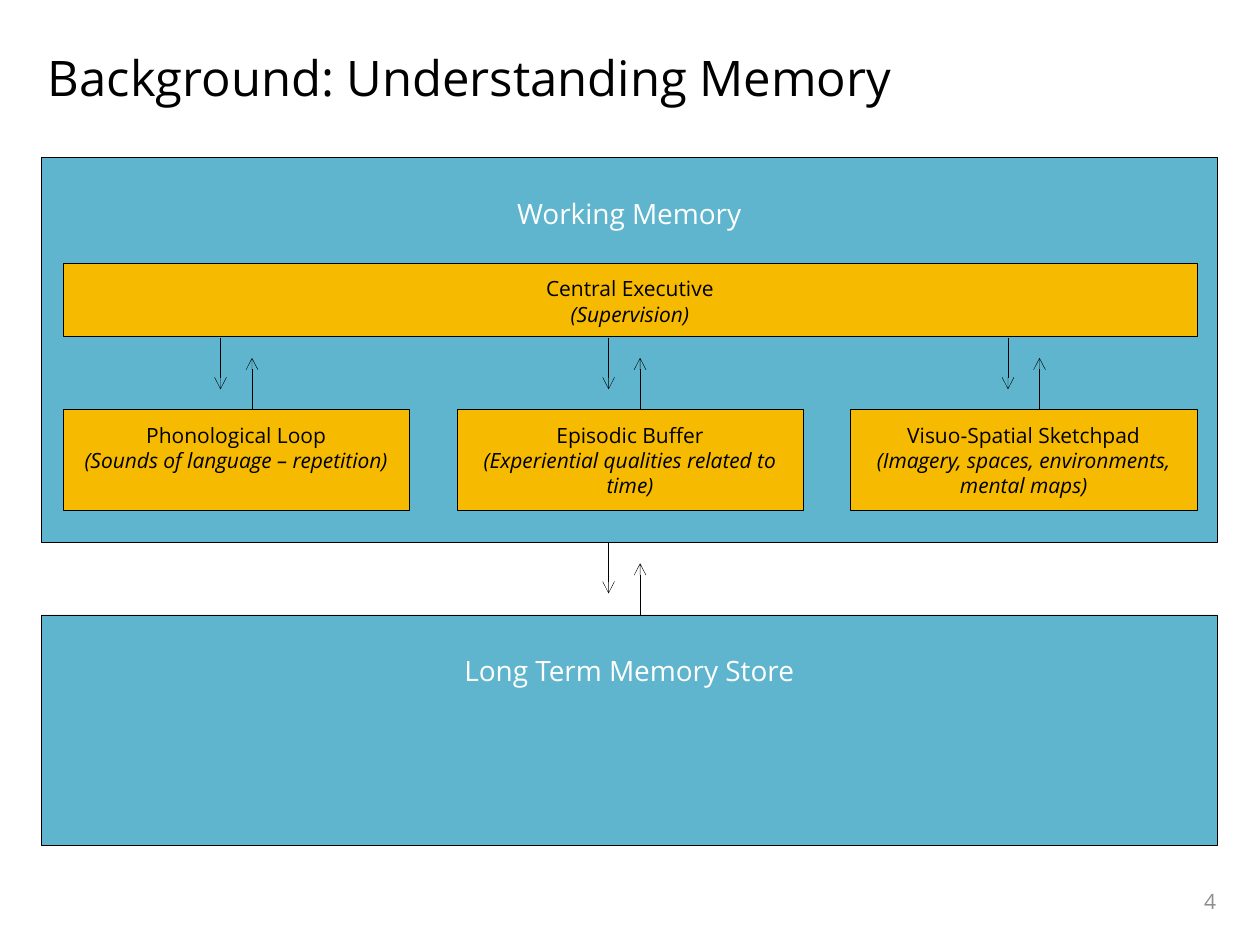
from pptx import Presentation
from pptx.dml.color import RGBColor
from pptx.enum.shapes import MSO_CONNECTOR, MSO_SHAPE
from pptx.enum.text import MSO_ANCHOR, MSO_AUTO_SIZE, PP_ALIGN
from pptx.oxml.ns import qn
from pptx.util import Inches, Pt
from lxml.etree import SubElement

TITLE = "Background: Understanding Memory"
NUMBER = "4"
STORES = [
    ("Long Term Memory Store", 4.88, 1.83),
    ("Working Memory", 1.25, 3.05),
]
CHIEF = ("Central Executive", "(Supervision)")
PARTS = [
    ("Phonological Loop", "(Sounds of language – repetition)"),
    ("Episodic Buffer", "(Experiential qualities related to time)"),
    ("Visuo-Spatial Sketchpad", "(Imagery, spaces, environments, mental maps)"),
]
FLOWS = [(1.75, 2.68, 3.25), (4.83, 2.68, 3.25), (8, 2.68, 3.25), (4.83, 4.3, 4.88)]

BLACK, WHITE, GRAY = "000000", "FFFFFF", "8C8C8C"
BLUE, GOLD = "5FB5CD", "F6BB00"
LEFT, WIDE, STEP = 0.5, 2.75, 3.125
REACH, SHIFT = 0.41, 0.25


def tint(code):
    return RGBColor.from_string(code)


def write(shape, lines, size, color, align, anchor=MSO_ANCHOR.TOP, top=0.05):
    frame = shape.text_frame
    form = {
        "word_wrap": True, "auto_size": MSO_AUTO_SIZE.NONE,
        "vertical_anchor": anchor,
        "margin_left": Inches(0.1), "margin_right": Inches(0.1),
        "margin_top": Inches(top), "margin_bottom": Inches(0.05),
    }
    for name, value in form.items():
        setattr(frame, name, value)
    for i, line in enumerate(lines):
        para = frame.paragraphs[0] if i == 0 else frame.add_paragraph()
        para.alignment = align
        run = para.add_run()
        run.text = line
        style = {"name": "Open Sans", "size": Pt(size), "italic": i > 0}
        for name, value in style.items():
            setattr(run.font, name, value)
        run.font.color.rgb = tint(color)


def pen(line):
    line.color.rgb = tint(BLACK)
    line.width = Pt(0.25)


def box(slide, area, fill, lines, size, color, top):
    shape = slide.shapes.add_shape(MSO_SHAPE.RECTANGLE, *map(Inches, area))
    shape.shadow.inherit = False
    shape.fill.solid()
    shape.fill.fore_color.rgb = tint(fill)
    pen(shape.line)
    write(shape, lines, size, color, PP_ALIGN.CENTER, top=top)


def arrow(slide, x, start, end):
    link = slide.shapes.add_connector(
        MSO_CONNECTOR.STRAIGHT, *map(Inches, (x, start, x, end)))
    pen(link.line)
    SubElement(link.line._get_or_add_ln(), qn("a:tailEnd"), type="arrow")
    SubElement(link._element.spPr, qn("a:effectLst"))


def main():
    deck = Presentation()
    deck.slide_width, deck.slide_height = Inches(10), Inches(7.5)
    slide = deck.slides.add_slide(deck.slide_layouts[5])

    title = slide.shapes.title
    area = {"left": 0.28, "top": 0.33, "width": 9.47, "height": 1.08}
    for name, value in area.items():
        setattr(title, name, Inches(value))
    write(title, [TITLE], 28, BLACK, PP_ALIGN.LEFT)

    page = slide.shapes.add_textbox(*map(Inches, (7.42, 6.95, 2.33, 0.4)))
    write(page, [NUMBER], 12, GRAY, PP_ALIGN.RIGHT, MSO_ANCHOR.MIDDLE)

    for name, top, high in STORES:
        box(slide, (0.33, top, 9.33, high), BLUE, [name], 16, WHITE, 0.31)
    box(slide, (LEFT, 2.09, 9, 0.58), GOLD, CHIEF, 12, BLACK, 0.1)
    for i, part in enumerate(PARTS):
        area = (LEFT + i * STEP, 3.25, WIDE, 0.8)
        box(slide, area, GOLD, part, 12, BLACK, 0.1)

    for x, upper, lower in FLOWS:
        arrow(slide, x, upper, upper + REACH)
        arrow(slide, x + SHIFT, lower, lower - REACH)

    deck.save("out.pptx")


if __name__ == "__main__":
    main()
